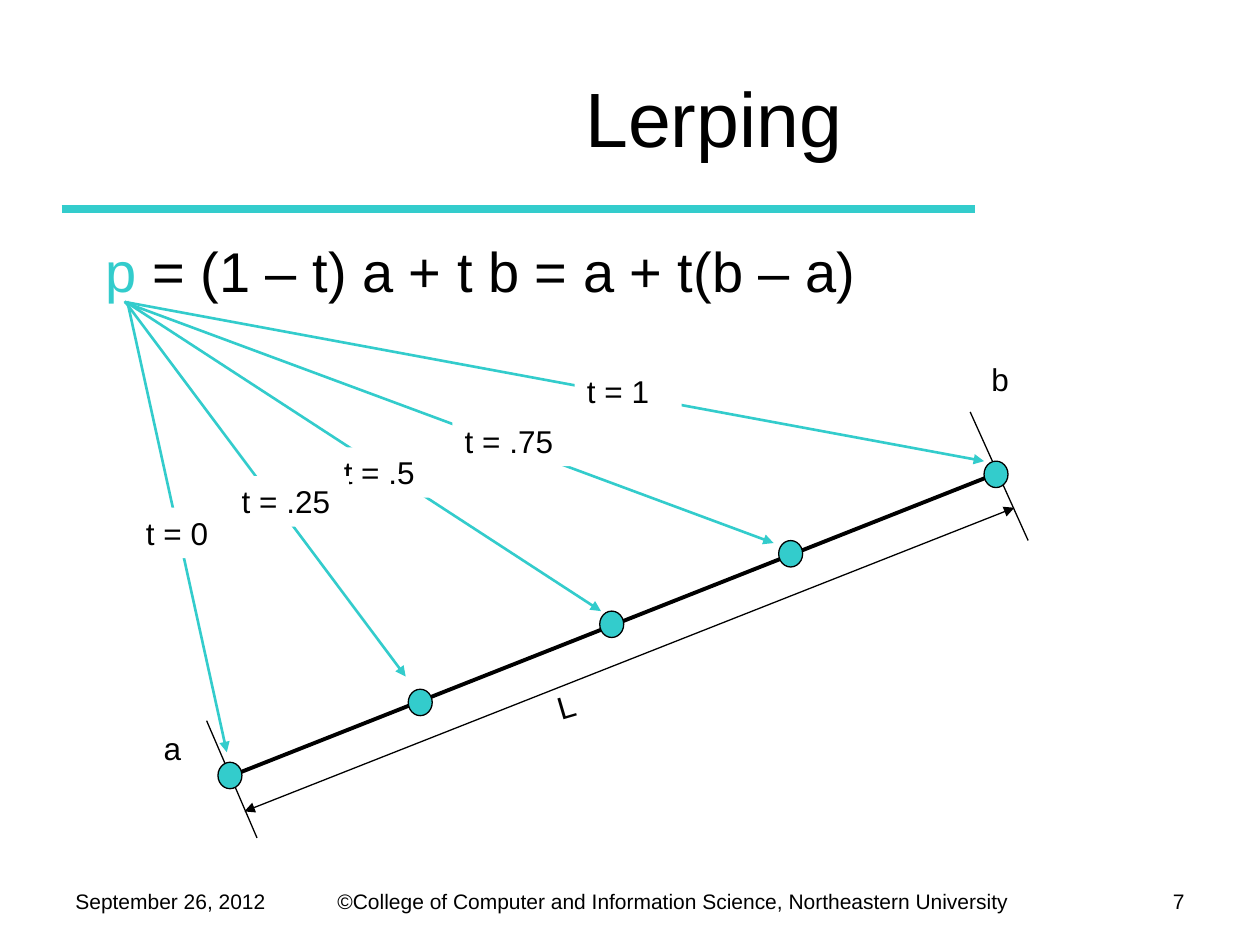
from dataclasses import dataclass

from pptx import Presentation
from pptx import util as u
from pptx.dml.color import RGBColor
from pptx.enum import shapes, text
from pptx.oxml.ns import qn
from lxml import etree

COLOURS = {"ink": "000000", "accent": "33CCCC", "paper": "FFFFFF"}
FONT = "Arial"
DOT_WIDTH, DOT_HEIGHT = 0.19, 0.21


@dataclass
class Label:
    words: str
    left: float
    top: float
    width: float
    height: float = 0.4
    size: float = 18
    align: text.PP_ALIGN = text.PP_ALIGN.LEFT
    rotation: float = 0


@dataclass
class Line:
    start: tuple[float, float]
    end: tuple[float, float]
    width: float = 0.75
    colour: str = "ink"
    head: bool = False
    tail: bool = False


@dataclass
class Step:
    arrow: Line
    label: Label
    dot: tuple[float, float]


def colour_of(name: str) -> RGBColor:
    return RGBColor.from_string(COLOURS[name])


def format_text(frame, size: float, align: text.PP_ALIGN) -> None:
    frame.word_wrap = True
    for para in frame.paragraphs:
        para.alignment = align
        for span in para.runs:
            span.font.name = FONT
            span.font.size = u.Pt(size)
            span.font.color.rgb = colour_of("ink")


def draw_label(page, label: Label, filled: bool = False):
    place = [u.Inches(n) for n in (label.left, label.top, label.width, label.height)]
    if filled:
        box = page.shapes.add_shape(shapes.MSO_SHAPE.RECTANGLE, *place)
        box.shadow.inherit = False
        box.fill.solid()
        box.fill.fore_color.rgb = colour_of("paper")
        box.line.fill.background()
    else:
        box = page.shapes.add_textbox(*place)
    box.rotation = label.rotation
    box.text_frame.text = label.words
    box.text_frame.vertical_anchor = text.MSO_ANCHOR.TOP
    format_text(box.text_frame, label.size, label.align)
    return box


def draw_line(page, line: Line) -> None:
    connector = page.shapes.add_connector(
        shapes.MSO_CONNECTOR.STRAIGHT,
        *[u.Inches(n) for n in (*line.start, *line.end)],
    )
    connector.line.width = u.Pt(line.width)
    connector.line.color.rgb = colour_of(line.colour)
    outline = connector.line._get_or_add_ln()
    for wanted, tag in ((line.head, "a:headEnd"), (line.tail, "a:tailEnd")):
        if wanted:
            etree.SubElement(outline, qn(tag), type="triangle")
    etree.SubElement(connector._element.spPr, qn("a:effectLst"))


def draw_dot(page, left: float, top: float) -> None:
    dot = page.shapes.add_shape(
        shapes.MSO_SHAPE.OVAL,
        u.Inches(left), u.Inches(top), u.Inches(DOT_WIDTH), u.Inches(DOT_HEIGHT),
    )
    dot.shadow.inherit = False
    dot.fill.solid()
    dot.fill.fore_color.rgb = colour_of("accent")
    dot.line.color.rgb = colour_of("ink")
    dot.line.width = u.Pt(0.75)


def draw_step(page, step: Step) -> None:
    draw_line(page, step.arrow)
    draw_label(page, step.label, filled=True)
    draw_dot(page, *step.dot)


def pointer(start: tuple[float, float], end: tuple[float, float]) -> Line:
    return Line(start, end, 1.5, "accent", tail=True)


FOOTERS = [
    Label("©College of Computer and Information Science, Northeastern University",
          2.58, 7, 5.66, 0.3, 12),
    Label("September 26, 2012", 0.5, 7, 1.75, 0.33, 12),
    Label("7", 8.67, 7, 0.83, 0.35, 12, text.PP_ALIGN.RIGHT),
]
SEGMENT_LABELS = [
    Label("b", 7.77, 2.81, 0.64),
    Label("a", 1.2, 5.74, 0.61),
    Label("L", 4.31, 5.3, 1.05, rotation=343.6),
]
LINES = [
    Line((0.49, 1.66), (7.74, 1.66), 4.5, "accent"),
    Line((1.83, 6.16), (7.88, 3.77), 2.25),
    Line((1.64, 5.72), (2.04, 6.65)),
    Line((7.7, 3.27), (8.16, 4.29)),
    Line((1.94, 6.44), (8.05, 4.03), head=True, tail=True),
]
STEPS = [
    Step(pointer((1.02, 2.41), (4.77, 4.85)), Label("t = .5", 2.63, 3.55, 0.85), (4.76, 4.85)),
    Step(pointer((1.01, 2.4), (7.81, 3.66)), Label("t = 1", 4.56, 2.9, 0.85), (7.81, 3.66)),
    Step(pointer((0.99, 2.39), (3.22, 5.37)), Label("t = .25", 1.82, 3.78, 0.95), (3.24, 5.47)),
    Step(pointer((0.99, 2.4), (6.14, 4.31)), Label("t = .75", 3.59, 3.3, 1.14), (6.18, 4.29)),
    Step(pointer((1.01, 2.39), (1.8, 5.97)), Label("t = 0", 1.06, 4.03, 0.85), (1.73, 6.05)),
]


def main() -> None:
    deck = Presentation()
    deck.slide_width, deck.slide_height = u.Inches(10), u.Inches(7.5)
    page = deck.slides.add_slide(deck.slide_layouts.get_by_name("Title Only"))

    title = page.shapes.title
    title.left, title.top = u.Inches(1.83), u.Inches(0.3)
    title.width, title.height = u.Inches(7.67), u.Inches(1.25)
    title.text_frame.text = "Lerping"
    title.text_frame.vertical_anchor = text.MSO_ANCHOR.MIDDLE
    format_text(title.text_frame, 44, text.PP_ALIGN.CENTER)

    for label in FOOTERS + SEGMENT_LABELS:
        draw_label(page, label)
    for line in LINES:
        draw_line(page, line)

    formula = draw_label(page, Label("p", 0.74, 1.83, 7.34, 0.63, 32))
    para = formula.text_frame.paragraphs[0]
    para.add_run().text = " = (1 – t) a + t b = a + t(b – a)"
    format_text(formula.text_frame, 32, text.PP_ALIGN.LEFT)
    para.runs[0].font.color.rgb = colour_of("accent")

    for step in STEPS:
        draw_step(page, step)

    deck.save("out.pptx")


if __name__ == "__main__":
    main()
